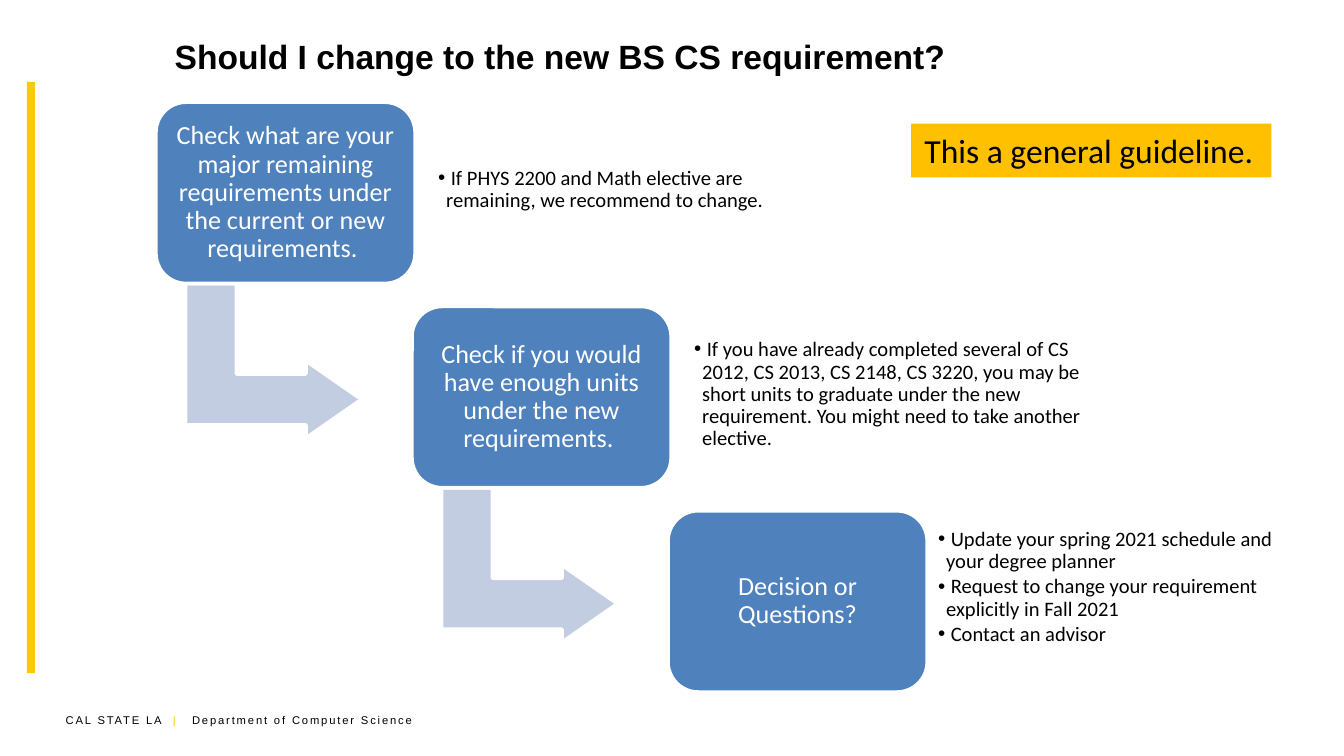
"""Build the slide that guides students through changing their degree requirement."""
from dataclasses import dataclass

from lxml import etree
from pptx import Presentation
from pptx import util as u
from pptx.dml import color
from pptx.enum import shapes, text
from pptx.oxml import ns

IN = u.Inches
KIND = shapes.MSO_SHAPE


@dataclass(frozen=True)
class Theme:
    """Hold the colours, fonts and type sizes."""
    black: str = "000000"
    white: str = "FFFFFF"
    gold: str = "FCC90A"
    amber: str = "FFC000"
    blue: str = "4F81BD"
    pale: str = "C2CDE1"
    head: str = "Arial"
    body: str = "Calibri"
    big: int = 18
    step: int = 14
    note: int = 11
    small: int = 6


T = Theme()

STEPS = [
    ("Check what are your major remaining requirements under the current or new requirements. ",
     ["If PHYS 2200 and Math elective are remaining, we recommend to change."],
     2.04, 2.68, {}),
    ("Check if you would have enough units under the new requirements. ",
     ["If you have already completed several of CS 2012, CS 2013, CS 2148, CS 3220, "
      "you may be short units to graduate under the new requirement. "
      "You might need to take another elective."],
     2.04, 3.17, {}),
    ("Decision or Questions?",
     ["Update your spring 2021 schedule and your degree planner",
      "Request to change your requirement explicitly in Fall 2021",
      "Contact an advisor"],
     1.97, 2.7, {"margin_left": IN(0.04), "margin_right": IN(0.04), "margin_bottom": IN(0.23)}),
]


def apply(item, form):
    """Set each attribute of an item from a dict."""
    for key, val in form.items():
        setattr(item, key, val)


def style(font, size, name, tint, bold=False):
    """Give a font its size, face and colour."""
    apply(font, {"size": u.Pt(size), "name": name, "bold": bold})
    font.color.rgb = color.RGBColor.from_string(tint)


def inset(gap):
    """Return equal margins for all four sides of a frame."""
    return {f"margin_{side}": IN(gap) for side in ("left", "right", "top", "bottom")}


def add_box(slide, kind, box, fill, edge=None):
    """Add a filled preset shape, with an outline if an edge colour is given."""
    shape = slide.shapes.add_shape(kind, *map(IN, box))
    shape.shadow.inherit = False
    shape.fill.solid()
    shape.fill.fore_color.rgb = color.RGBColor.from_string(fill)
    if edge:
        shape.line.color.rgb = color.RGBColor.from_string(edge)
        shape.line.width = u.Pt(2)
    else:
        shape.line.fill.background()
    return shape


def add_card(slide, box, words):
    """Add a rounded step card with centred text."""
    card = add_box(slide, KIND.ROUNDED_RECTANGLE, box, T.blue, T.white)
    frame = card.text_frame
    apply(frame, {**inset(0.06), "word_wrap": True, "vertical_anchor": text.MSO_ANCHOR.MIDDLE})
    para = frame.paragraphs[0]
    apply(para, {"text": words, "alignment": text.PP_ALIGN.CENTER, "line_spacing": 0.9})
    style(para.font, T.step, T.body, T.white)


def add_bend(slide, box):
    """Add a bent arrow that leads down and to the right."""
    bend = add_box(slide, KIND.BENT_UP_ARROW, box, T.pale, T.white)
    bend.rotation = 90
    for pos, val in enumerate((0.33, 0.25, 0.36)):
        bend.adjustments[pos] = val


def add_notes(slide, box, lines, form):
    """Add a bulleted list beside a step."""
    frame = slide.shapes.add_textbox(*map(IN, box)).text_frame
    apply(frame, {**inset(0.06), "word_wrap": True,
                  "vertical_anchor": text.MSO_ANCHOR.MIDDLE, **form})
    for pos, line in enumerate(lines):
        para = frame.add_paragraph() if pos else frame.paragraphs[0]
        props = para._p.get_or_add_pPr()
        props.set("marL", str(IN(0.06)))
        props.set("indent", str(-IN(0.06)))
        etree.SubElement(props, ns.qn("a:buFont")).set("typeface", T.head)
        etree.SubElement(props, ns.qn("a:buChar")).set("char", "•")
        apply(para, {"text": " " + line, "level": 1, "line_spacing": 0.9,
                     "space_after": u.Pt(1.65)})
        style(para.font, T.note, T.body, T.black)


def add_title(slide, words):
    """Place and format the title."""
    title = slide.shapes.title
    apply(title, dict(zip(("left", "top", "width", "height"), map(IN, (1.2, 0.08, 8.06, 0.68)))))
    frame = title.text_frame
    apply(frame, {"auto_size": text.MSO_AUTO_SIZE.NONE, "vertical_anchor": text.MSO_ANCHOR.MIDDLE})
    para = frame.paragraphs[0]
    apply(para, {"text": words, "alignment": text.PP_ALIGN.LEFT})
    style(para.font, T.big, T.head, T.black, True)


def add_foot(slide):
    """Add the spaced footer line."""
    frame = slide.shapes.add_textbox(*map(IN, (0.39, 5.26, 2.92, 0.2))).text_frame
    frame.word_wrap = True
    para = frame.paragraphs[0]
    tabs = etree.SubElement(para._p.get_or_add_pPr(), ns.qn("a:tabLst"))
    stop = etree.SubElement(tabs, ns.qn("a:tab"))
    stop.set("pos", str(IN(0.94)))
    stop.set("algn", "l")
    for words, tint in (("CAL STATE LA ", T.black), (" |\t", T.gold),
                        ("Department of Computer Science", T.black)):
        run = para.add_run()
        run.text = words
        style(run.font, T.small, T.head, tint)
        run.font._element.set("spc", "100")


def add_tag(slide, words):
    """Add the highlighted remark."""
    frame = add_box(slide, KIND.RECTANGLE, (6.78, 0.92, 2.68, 0.4), T.amber).text_frame
    apply(frame, {"word_wrap": False, "auto_size": text.MSO_AUTO_SIZE.SHAPE_TO_FIT_TEXT,
                  "vertical_anchor": text.MSO_ANCHOR.TOP})
    para = frame.paragraphs[0]
    apply(para, {"text": words, "alignment": text.PP_ALIGN.LEFT})
    style(para.font, T.big, T.body, T.black)


def main():
    """Build and save the slide."""
    deck = Presentation()
    apply(deck, {"slide_width": IN(10), "slide_height": IN(10) * 9 // 16})
    slide = deck.slides.add_slide(deck.slide_layouts[5])
    add_foot(slide)
    add_box(slide, KIND.RECTANGLE, (0.2, 0.61, 0.06, 4.4), T.gold)
    add_title(slide, "Should I change to the new BS CS requirement?")
    for pos, (words, lines, shift, wide, form) in enumerate(STEPS):
        left, top = 1.16 + 1.905 * pos, 0.76 + 1.52 * pos
        if pos < len(STEPS) - 1:
            add_bend(slide, (left + 0.3, top + 1.27, 1.15, 1.31))
        add_card(slide, (left, top, 1.93, 1.35), words)
        add_notes(slide, (left + shift, top + 0.11, wide, 1.09), lines, form)
    add_tag(slide, "This a general guideline.")
    deck.save("out.pptx")


if __name__ == "__main__":
    main()
